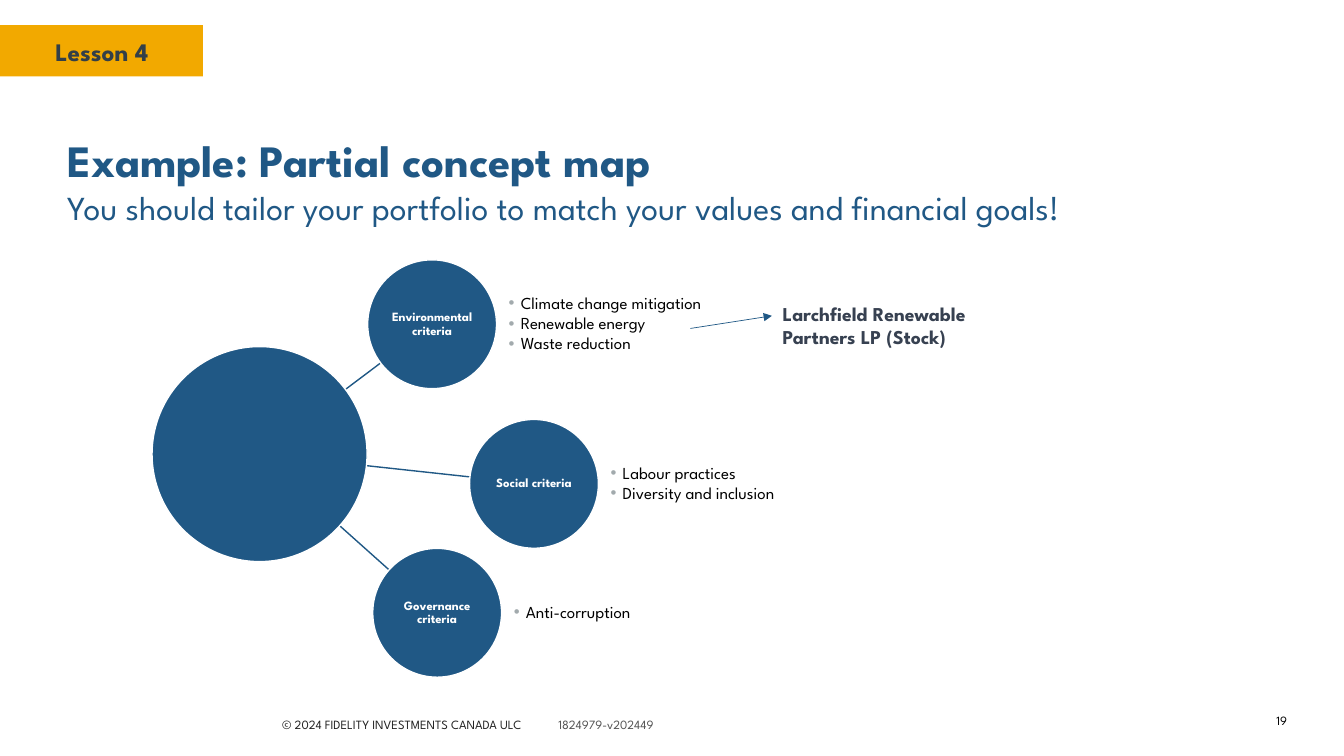
from dataclasses import dataclass
from math import hypot

from lxml.etree import SubElement
from pptx import Presentation
from pptx.dml.color import RGBColor
from pptx.enum.shapes import MSO_CONNECTOR as Connector, MSO_SHAPE as Preset
from pptx.enum.text import MSO_ANCHOR as Anchor, MSO_AUTO_SIZE as AutoSize, PP_ALIGN as Align
from pptx.oxml.ns import qn
from pptx.util import Inches, Pt

# Square grid cells: 160 columns by 90 rows
CELL = Inches(1) // 12
COLUMNS, ROWS = 160, 90

FONT = "League Spartan"
BLUE = RGBColor(0x20, 0x58, 0x85)
AMBER = RGBColor(0xF2, 0xA9, 0x00)
SLATE = RGBColor(0x33, 0x3F, 0x48)
INK = RGBColor(0x37, 0x41, 0x51)
CHARCOAL = RGBColor(0x22, 0x22, 0x22)
GREY = RGBColor(0x54, 0x54, 0x54)
SILVER = RGBColor(0xA2, 0xAA, 0xAD)
BLACK = RGBColor(0, 0, 0)
WHITE = RGBColor(0xFF, 0xFF, 0xFF)


@dataclass(frozen=True)
class Circle:
    x: float
    y: float
    radius: float


@dataclass(frozen=True)
class Criterion:
    label: str
    circle: Circle
    points: tuple[str, ...]


HUB = Circle(30.9, 54.06, 12.8)
SPOKE_START = 39.8  # column inside the hub where every spoke begins
NODE_RADIUS = 7.67
LIST_OFFSET, LIST_WIDTH = 9.12, 23
CRITERIA = (
    Criterion("Environmental criteria", Circle(51.44, 38.6, NODE_RADIUS),
              ("Climate change mitigation", "Renewable energy", "Waste reduction")),
    Criterion("Social criteria", Circle(63.57, 57.6, NODE_RADIUS),
              ("Labour practices", "Diversity and inclusion")),
    Criterion("Governance criteria", Circle(52.04, 72.95, NODE_RADIUS),
              ("Anti-corruption",)),
)


def cells(*lengths: float) -> list[int]:
    return [round(length * CELL) for length in lengths]


def place(shape, left: float, top: float, width: float, height: float) -> None:
    shape.left, shape.top, shape.width, shape.height = cells(left, top, width, height)


def write(paragraph, text: str, *, size: float, color: RGBColor, bold: bool = False,
          align: Align = Align.LEFT, spacing: float = 1.0) -> None:
    paragraph.alignment = align
    paragraph.line_spacing = spacing
    run = paragraph.add_run()
    run.text = text
    font = run.font
    font.name, font.size, font.bold = FONT, Pt(size), bold
    font.color.rgb = color


def set_frame(frame, *, anchor: Anchor = Anchor.TOP, inset: float | None = None) -> None:
    frame.word_wrap = True
    frame.auto_size = AutoSize.NONE
    frame.vertical_anchor = anchor
    if inset is not None:
        frame.margin_left = frame.margin_right = Inches(inset)
        frame.margin_top = frame.margin_bottom = Inches(inset)


def add_text(slide, box: tuple[float, ...], *, anchor: Anchor = Anchor.TOP):
    frame = slide.shapes.add_textbox(*cells(*box)).text_frame
    set_frame(frame, anchor=anchor)
    return frame.paragraphs[0]


def add_circle(slide, circle: Circle):
    side = 2 * circle.radius
    shape = slide.shapes.add_shape(
        Preset.OVAL, *cells(circle.x - circle.radius, circle.y - circle.radius, side, side))
    shape.shadow.inherit = False
    shape.fill.solid()
    shape.fill.fore_color.rgb = BLUE
    shape.line.color.rgb = WHITE
    shape.line.width = Pt(1)
    return shape


def add_line(slide, start: tuple[float, float], end: tuple[float, float], *,
             width: float, arrow: bool = False) -> None:
    line = slide.shapes.add_connector(Connector.STRAIGHT, *cells(*start, *end))
    line.line.color.rgb = BLUE
    line.line.width = Pt(width)
    if arrow:
        SubElement(line.line._get_or_add_ln(), qn("a:tailEnd"), type="triangle")
    SubElement(line._element.spPr, qn("a:effectLst"))


def add_spoke(slide, node: Circle) -> None:
    across, down = node.x - HUB.x, node.y - HUB.y
    rim = node.radius / hypot(across, down)
    start = (SPOKE_START, HUB.y + (SPOKE_START - HUB.x) * down / across)
    add_line(slide, start, (node.x - across * rim, node.y - down * rim), width=1)


def add_bullet(paragraph) -> None:
    properties = paragraph._p.get_or_add_pPr()
    properties.set("marL", str(Inches(0.12)))
    properties.set("indent", str(-Inches(0.12)))
    color = SubElement(properties, qn("a:buClr"))
    SubElement(color, qn("a:srgbClr"), val=str(SILVER))
    SubElement(properties, qn("a:buFont"), typeface="Arial")
    SubElement(properties, qn("a:buChar"), char="•")


def fill_list(placeholder, criterion: Criterion) -> None:
    node = criterion.circle
    place(placeholder, node.x + LIST_OFFSET, node.y - node.radius, LIST_WIDTH, 2 * node.radius)
    frame = placeholder.text_frame
    set_frame(frame, anchor=Anchor.MIDDLE, inset=0)
    for index, point in enumerate(criterion.points):
        paragraph = frame.add_paragraph() if index else frame.paragraphs[0]
        add_bullet(paragraph)
        paragraph.space_before, paragraph.space_after = Pt(0), Pt(1.5)
        write(paragraph, point, size=12, color=BLACK, spacing=0.9)


def add_lesson_banner(slide) -> None:
    banner = slide.shapes.add_shape(Preset.RECTANGLE, *cells(0, 3, 24.15, 6.1))
    banner.shadow.inherit = False
    banner.fill.solid()
    banner.fill.fore_color.rgb = AMBER
    banner.line.fill.background()
    write(add_text(slide, (5.4, 3.7, 15.7, 4.8)), "Lesson 4", size=18, color=SLATE, bold=True)


def add_footer(slide) -> None:
    notice = add_text(slide, (32.4, 84.7, 50.8, 3))
    tabs = SubElement(notice._p.get_or_add_pPr(), qn("a:tabLst"))
    SubElement(tabs, qn("a:tab"), pos=str(Inches(2.74)), algn="l")
    write(notice, "© 2024 FIDELITY INVESTMENTS CANADA ULC\t", size=9, color=CHARCOAL)
    write(notice, "1824979-v202449", size=9, color=GREY)
    number = add_text(slide, (146, 84.7, 8.4, 2.2), anchor=Anchor.MIDDLE)
    write(number, "19", size=9, color=BLACK, align=Align.RIGHT)


def fill_title(title) -> None:
    place(title, 6.8, 15.2, 146.4, 6.7)
    set_frame(title.text_frame)
    paragraph = title.text_frame.paragraphs[0]
    write(paragraph, "Example: Partial concept map", size=32, color=BLUE, bold=True)
    paragraph.add_line_break()
    write(paragraph, "You should tailor your portfolio to match your values and financial goals!",
          size=24, color=BLUE)


def add_concept_map(slide) -> None:
    for criterion in CRITERIA:
        add_spoke(slide, criterion.circle)
    add_circle(slide, HUB)
    bodies = [body for body in slide.placeholders if body.placeholder_format.idx > 0]
    for criterion, body in zip(CRITERIA, bodies):
        frame = add_circle(slide, criterion.circle).text_frame
        set_frame(frame, anchor=Anchor.MIDDLE, inset=0.01)
        write(frame.paragraphs[0], criterion.label, size=9, color=WHITE, bold=True,
              align=Align.CENTER, spacing=0.9)
        fill_list(body, criterion)
    for unused in bodies[len(CRITERIA):]:
        unused._element.getparent().remove(unused._element)

    # Matching investment
    add_line(slide, (82.2, 39.1), (91.9, 37.6), width=0.5, arrow=True)
    write(add_text(slide, (92, 35.3, 32.3, 9.8)), "Larchfield Renewable Partners LP (Stock)",
          size=14, color=INK, bold=True)


def main() -> None:
    presentation = Presentation()
    presentation.slide_width, presentation.slide_height = cells(COLUMNS, ROWS)
    slide = presentation.slides.add_slide(presentation.slide_layouts.get_by_name("Comparison"))
    add_lesson_banner(slide)
    add_footer(slide)
    fill_title(slide.shapes.title)
    add_concept_map(slide)
    presentation.save("out.pptx")


if __name__ == "__main__":
    main()
